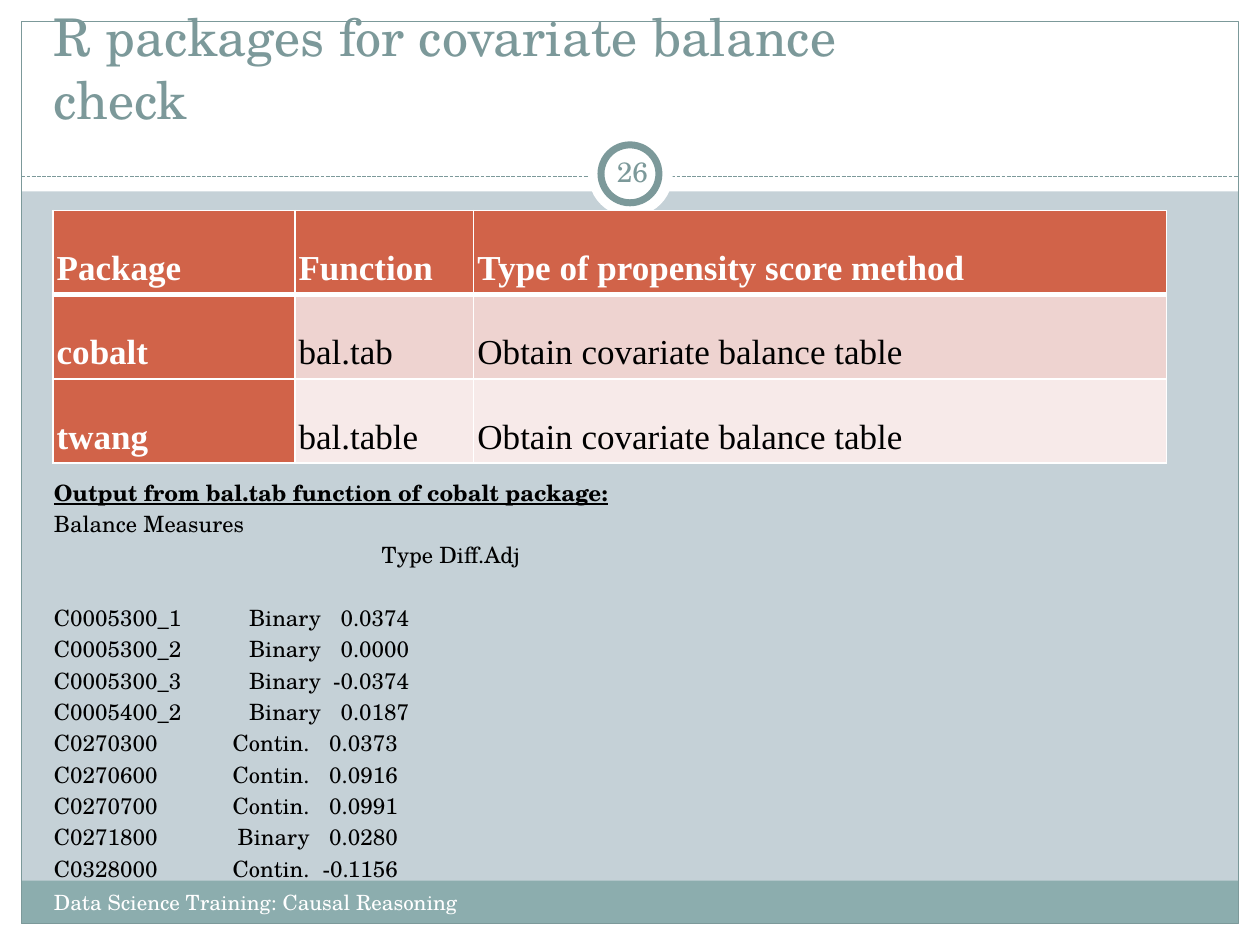
from lxml import etree
from pptx import Presentation
from pptx import util as u
from pptx.dml.color import RGBColor
from pptx.enum import dml, shapes, text
from pptx.oxml.ns import qn

Inches, Pt = u.Inches, u.Pt
SERIF, TABLE_FONT = "TeX Gyre Schola", "Times New Roman"
WHITE, BLACK, TEAL, BAND = "FFFFFF", "000000", "7C999A", "8CADAE"
RUST, PINK, PALE_PINK = "D16349", "EED3D0", "F7EAE9"


def color(value):
    return RGBColor.from_string(value)


def write(paragraph, content, size=12.8, font=SERIF, fill=BLACK, bold=False,
          underline=False, align=None, before=0, spacing=None, tabs=()):
    """Fill one paragraph; tabs holds (position in inches, alignment) pairs."""
    if tabs:
        tab_list = etree.SubElement(paragraph._p.get_or_add_pPr(), qn("a:tabLst"))
        for position, alignment in tabs:
            etree.SubElement(tab_list, qn("a:tab"),
                             pos=str(Inches(position)), algn=alignment)
    paragraph.alignment = align
    paragraph.space_before = Pt(before)
    if spacing:
        paragraph.line_spacing = spacing
    run = paragraph.add_run()
    run.text = content
    run.font.size, run.font.name = Pt(size), font
    run.font.bold, run.font.underline = bold, underline
    run.font.color.rgb = color(fill)


def add_frame(slide, box, anchor=text.MSO_ANCHOR.TOP, inset=None):
    frame = slide.shapes.add_textbox(*map(Inches, box)).text_frame
    frame.word_wrap = True
    frame.vertical_anchor = anchor
    if inset is not None:
        frame.margin_left = frame.margin_right = Inches(inset)
        frame.margin_top = frame.margin_bottom = Inches(inset)
    return frame


def add_panel(slide, box, fill=None, line=None, width=0.75,
              kind=shapes.MSO_SHAPE.RECTANGLE):
    shape = slide.shapes.add_shape(kind, *map(Inches, box))
    shape.shadow.inherit = False
    if fill:
        shape.fill.solid()
        shape.fill.fore_color.rgb = color(fill)
    else:
        shape.fill.background()
    if line:
        shape.line.color.rgb = color(line)
        shape.line.width = Pt(width)
    else:
        shape.line.fill.background()


def add_background(slide, width, height, margin=0.17):
    slide.background.fill.solid()
    slide.background.fill.fore_color.rgb = color("C5D1D7")
    # White margins, with a deeper one behind the title
    add_panel(slide, (0, height - margin, width, margin), WHITE)
    add_panel(slide, (0, 0, width, 1.52), WHITE)
    for left in (0, width - margin):
        add_panel(slide, (left, 0, margin, height), WHITE)
    # Footer band and outer frame
    inner = width - 2 * margin
    add_panel(slide, (margin, 6.99, inner, 0.34), BAND)
    add_panel(slide, (margin, margin, inner, height - 2 * margin), line=TEAL)
    # Dashed divider
    divider = slide.shapes.add_connector(
        shapes.MSO_CONNECTOR.STRAIGHT,
        *map(Inches, (margin, 1.4, width - margin, 1.4)))
    divider.line.color.rgb = color(TEAL)
    divider.line.width = Pt(0.75)
    divider.line.dash_style = dml.MSO_LINE.SQUARE_DOT
    etree.SubElement(divider._element.spPr, qn("a:effectLst"))


def add_page_badge(slide, box, number):
    left, top, size, _ = box
    oval = shapes.MSO_SHAPE.OVAL
    add_panel(slide, box, WHITE, kind=oval)
    ring = (left + 0.1, top + 0.1, size - 0.21, size - 0.21)
    add_panel(slide, ring, WHITE, TEAL, 4, oval)
    frame = add_frame(slide, (left + 0.1, top + 0.07, 0.5, 0.48),
                      text.MSO_ANCHOR.MIDDLE, 0.05)
    write(frame.paragraphs[0], number, size=16, fill=TEAL,
          align=text.PP_ALIGN.CENTER)


def add_title(slide, box, content):
    frame = add_frame(slide, box, text.MSO_ANCHOR.BOTTOM)
    write(frame.paragraphs[0], content, size=29.7, fill=TEAL)


def add_footer(slide, box, content):
    write(add_frame(slide, box).paragraphs[0], content, size=12, fill=WHITE)


def add_balance_output(slide, box):
    frame = add_frame(slide, box)
    gap, line_pitch = 2.56, 17.9
    levels = [("C0005300_1", "Binary", "0.0374"),
              ("C0005300_2", "Binary", "0.0000"),
              ("C0005300_3", "Binary", "-0.0374"),
              ("C0005400_2", "Binary", "0.0187")]
    variables = [("C0270300", "Contin.", "0.0373"),
                 ("C0270600", "Contin.", "0.0916"),
                 ("C0270700", "Contin.", "0.0991"),
                 ("C0271800", "Binary", "0.0280"),
                 ("C0328000", "Contin.", "-0.1156")]
    write(frame.paragraphs[0], "Output from bal.tab function of cobalt package:",
          bold=True, underline=True)
    write(frame.add_paragraph(), "Balance Measures", before=gap)
    write(frame.add_paragraph(), "\tType Diff.Adj", before=gap, tabs=[(2.6, "l")])
    before = gap + line_pitch  # one open line above the values
    for rows, type_end in ((levels, 2.12), (variables, 2.03)):
        tabs = [(type_end, "r"), (type_end + 0.7, "r")]
        for row in rows:
            write(frame.add_paragraph(), "\t".join(row), before=before, tabs=tabs)
            before = gap


def set_borders(cell, bottom=1):
    properties = cell._tc.get_or_add_tcPr()
    widths = {"a:lnL": 1, "a:lnR": 1, "a:lnT": 1, "a:lnB": bottom}
    for position, (tag, width) in enumerate(widths.items()):
        line = etree.Element(qn(tag), w=str(Pt(width)))
        fill = etree.SubElement(line, qn("a:solidFill"))
        etree.SubElement(fill, qn("a:srgbClr"), val=WHITE)
        properties.insert(position, line)


def add_package_table(slide, box):
    rows = [("Package", "Function", "Type of propensity score method"),
            ("cobalt", "bal.tab", "Obtain covariate balance table"),
            ("twang", "bal.table", "Obtain covariate balance table")]
    table = slide.shapes.add_table(3, 3, *map(Inches, box)).table
    for column, width in zip(table.columns, (1.92, 1.42, 5.5)):
        column.width = Inches(width)
    for row, height in zip(table.rows, (0.61, 0.67, 0.62)):
        row.height = Inches(height)
    for i, row in enumerate(rows):
        for j, content in enumerate(row):
            cell = table.cell(i, j)
            heading = i == 0 or j == 0
            cell.margin_left = cell.margin_right = Inches(0.03)
            cell.margin_top = cell.margin_bottom = 0
            cell.fill.solid()
            cell.fill.fore_color.rgb = color(
                RUST if heading else PINK if i == 1 else PALE_PINK)
            set_borders(cell, bottom=3 if i == 0 else 1)
            write(cell.text_frame.paragraphs[0], content, size=20,
                  font=TABLE_FONT, fill=WHITE if heading else BLACK,
                  bold=heading, spacing=2.0)


def main():
    presentation = Presentation()
    presentation.slide_width, presentation.slide_height = Inches(10), Inches(7.5)
    slide = presentation.slides.add_slide(presentation.slide_layouts[6])
    add_background(slide, 10, 7.5)
    add_page_badge(slide, (4.67, 1.05, 0.67, 0.67), "26")
    add_title(slide, (0.33, 0.25, 7.42, 0.83),
              "R packages for covariate balance check")
    add_footer(slide, (0.33, 7.01, 3.92, 0.4),
               "Data Science Training: Causal Reasoning")
    add_balance_output(slide, (0.33, 3.75, 9.3, 2.92))
    add_package_table(slide, (0.42, 1.67, 8.84, 1.9))
    presentation.save("out.pptx")


if __name__ == "__main__":
    main()
